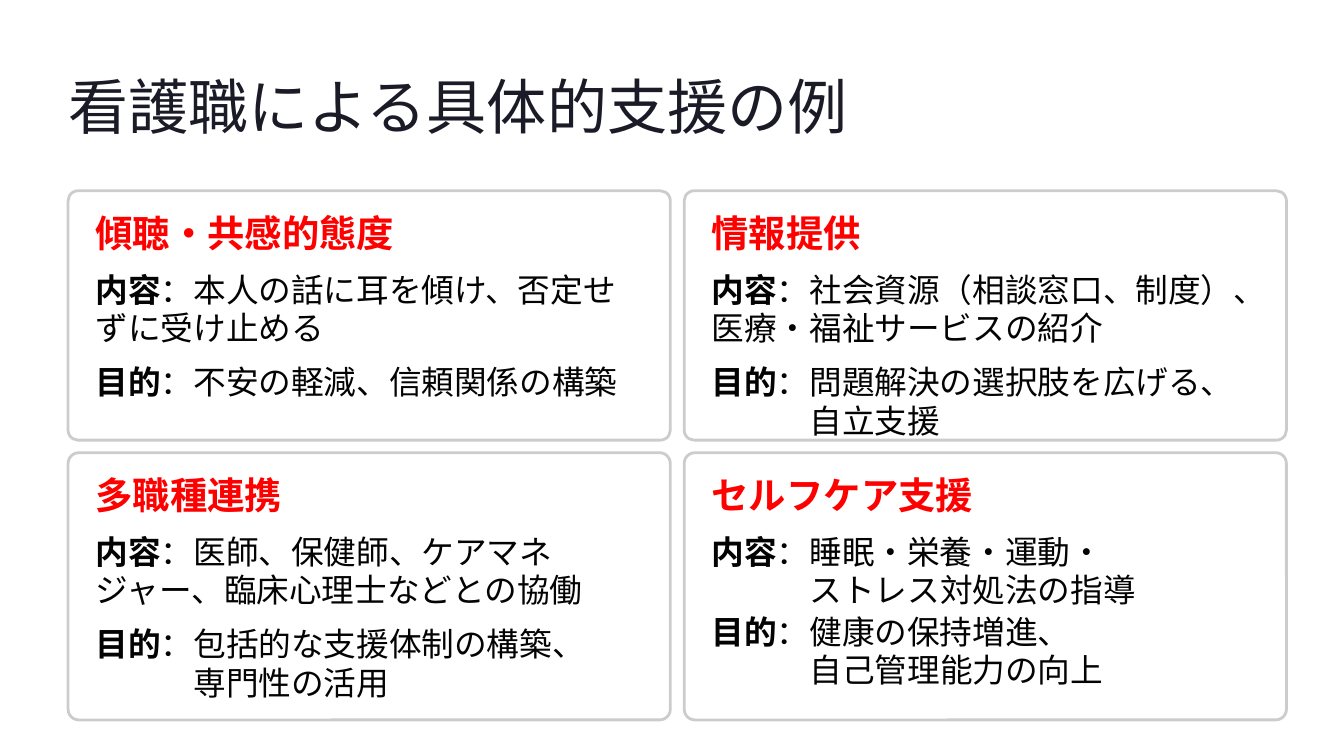
import pptx
import pptx.util
import pptx.dml.color
import pptx.enum.shapes
import pptx.enum.text
import pptx.oxml.ns
from lxml import etree

Cm, Pt = pptx.util.Cm, pptx.util.Pt

LEFT = 2.06
CARD_WIDTH = 18.21
COLUMN_PITCH = 18.63
ROWS = [(5.77, 7.54), (13.69, 8.08)]  # top and height of each row
PURPOSE_TOP = 5.2

# Heading, content lines, purpose lines, offset of the purpose
CARDS = [
    ("傾聴・共感的態度", ["本人の話に耳を傾け、否定せずに受け止める"],
     ["不安の軽減、信頼関係の構築"], PURPOSE_TOP),
    ("情報提供", ["社会資源（相談窓口、制度）、医療・福祉サービスの紹介"],
     ["問題解決の選択肢を広げる、", "自立支援"], PURPOSE_TOP),
    ("多職種連携", ["医師、保健師、ケアマネジャー、臨床心理士などとの協働"],
     ["包括的な支援体制の構築、", "専門性の活用"], PURPOSE_TOP),
    ("セルフケア支援", ["睡眠・栄養・運動・", "ストレス対処法の指導"],
     ["健康の保持増進、", "自己管理能力の向上"], 4.83),
]


def color(value):
    return pptx.dml.color.RGBColor.from_string(value)


def prepare_frame(frame):
    frame.margin_left = frame.margin_right = 0
    frame.margin_top = frame.margin_bottom = 0
    frame.word_wrap = True
    frame.auto_size = pptx.enum.text.MSO_AUTO_SIZE.NONE
    frame.vertical_anchor = pptx.enum.text.MSO_ANCHOR.TOP


def format_paragraph(paragraph, name, size, value, spacing):
    paragraph.alignment = pptx.enum.text.PP_ALIGN.LEFT
    paragraph.line_spacing = Pt(spacing)
    paragraph.font.name = name
    paragraph.font.size = Pt(size)
    paragraph.font.color.rgb = color(value)


def add_text_frame(slide, left, top, height):
    box = slide.shapes.add_textbox(Cm(left), Cm(top), Cm(16.26), Cm(height))
    prepare_frame(box.text_frame)
    return box.text_frame


def add_title(slide, left, top, width, height):
    title = slide.shapes.title
    title.left, title.top = Cm(left), Cm(top)
    title.width, title.height = Cm(width), Cm(height)
    prepare_frame(title.text_frame)
    title.text_frame.text = "看護職による具体的支援の例"
    format_paragraph(title.text_frame.paragraphs[0], "Inter", 51.5, "1B1B27", 64.5)


def add_labelled_text(slide, left, top, label, lines):
    frame = add_text_frame(slide, left, top, 1.17 * 2)
    for index, line in enumerate(lines):
        paragraph = frame.add_paragraph() if index else frame.paragraphs[0]
        format_paragraph(paragraph, "Roboto", 28, "030303", 33)
        if index == 0:
            label_run = paragraph.add_run()
            label_run.text = label
            label_run.font.bold = True
            line = "：" + line
        else:
            # Later lines align after the three-character label
            paragraph._p.get_or_add_pPr().set("marL", str(Pt(3 * 28)))
        paragraph.add_run().text = line


def add_card(slide, left, top, width, height, card):
    heading, content, purpose, purpose_top = card

    # Rounded panel
    panel = slide.shapes.add_shape(
        pptx.enum.shapes.MSO_SHAPE.ROUNDED_RECTANGLE,
        Cm(left), Cm(top), Cm(width), Cm(height))
    panel.adjustments[0] = 0.04
    panel.shadow.inherit = False
    panel.fill.solid()
    panel.fill.fore_color.rgb = color("FFFFFF")
    fill = panel._element.spPr.find(".//" + pptx.oxml.ns.qn("a:srgbClr"))
    etree.SubElement(fill, pptx.oxml.ns.qn("a:alpha"), val="95000")
    panel.line.color.rgb = color("CCCCCC")
    panel.line.width = Pt(2.4)

    # Heading
    text_left = left + 0.83
    paragraph = add_text_frame(slide, text_left, top + 0.81, 1.14).paragraphs[0]
    paragraph.text = heading
    format_paragraph(paragraph, "Inter", 32, "FF0000", 32)
    paragraph.font.bold = True

    # Content and purpose
    add_labelled_text(slide, text_left, top + 2.4, "内容", content)
    add_labelled_text(slide, text_left, top + purpose_top, "目的", purpose)


def main():
    presentation = pptx.Presentation()
    presentation.slide_width, presentation.slide_height = Cm(40.64), Cm(22.86)
    slide = presentation.slides.add_slide(presentation.slide_layouts[5])
    add_title(slide, LEFT, 2.01, 36.8, 2.29)
    for index, card in enumerate(CARDS):
        row, column = divmod(index, 2)
        top, height = ROWS[row]
        add_card(slide, LEFT + column * COLUMN_PITCH, top, CARD_WIDTH, height, card)
    presentation.save("out.pptx")


if __name__ == "__main__":
    main()
